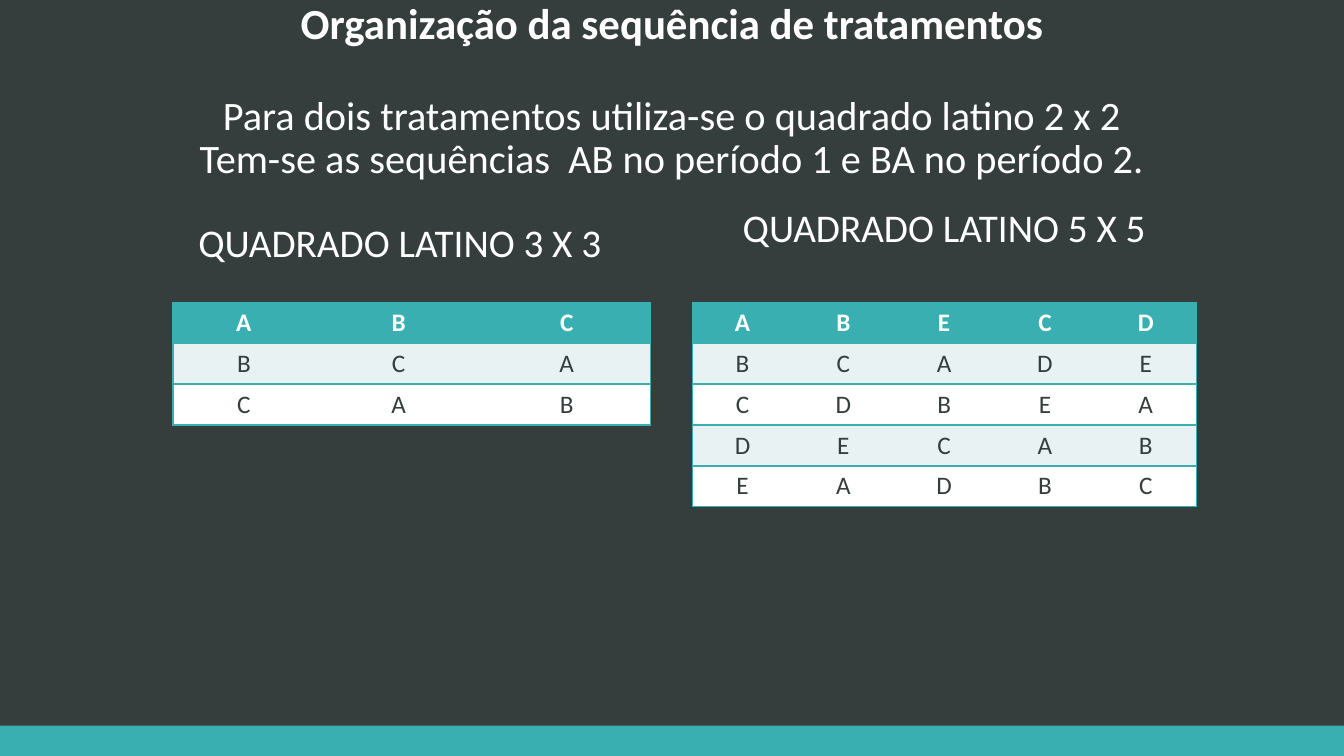
import pptx
import pptx.util
import pptx.dml.color
import pptx.enum.shapes
import pptx.enum.text
import pptx.oxml.ns
import lxml.etree

Pt = pptx.util.Pt
ANCHOR = pptx.enum.text.MSO_ANCHOR
TEAL, DARK, PALE, WHITE = "3AAFB2", "363D3D", "E8F2F2", "FFFFFF"
ROW_HEIGHT = 29.28


def rgb(value):
    """Turn a hex string into a colour."""
    return pptx.dml.color.RGBColor.from_string(value)


def write(paragraph, text, size=28, color=WHITE, bold=False, spacing=0.9, after=0):
    """Fill a centred paragraph with formatted text."""
    paragraph.alignment = pptx.enum.text.PP_ALIGN.CENTER
    paragraph.line_spacing = spacing
    paragraph.space_after = Pt(after)
    run = paragraph.add_run()
    run.text = text
    run.font.name = "Calibri"
    run.font.size = Pt(size)
    run.font.bold = bold
    run.font.color.rgb = rgb(color)


def add_text(slide, left, top, width, height, lines, anchor, bottom_inset=3.6):
    """Add a text box with one paragraph for each (text, format) pair."""
    frame = slide.shapes.add_textbox(Pt(left), Pt(top), Pt(width), Pt(height)).text_frame
    frame.word_wrap = True
    frame.vertical_anchor = anchor
    frame.margin_bottom = Pt(bottom_inset)
    for index, (text, style) in enumerate(lines):
        paragraph = frame.add_paragraph() if index else frame.paragraphs[0]
        write(paragraph, text, **style)


def set_borders(cell, first, last):
    """Draw the horizontal edges and only the outer vertical edges."""
    qn = pptx.oxml.ns.qn
    properties = cell._tc.get_or_add_tcPr()
    for side, visible in (("L", first), ("R", last), ("T", True), ("B", True)):
        edge = lxml.etree.SubElement(properties, qn(f"a:ln{side}"), w=str(Pt(1)))
        if visible:
            paint = lxml.etree.SubElement(edge, qn("a:solidFill"))
            lxml.etree.SubElement(paint, qn("a:srgbClr"), val=TEAL)
        else:
            lxml.etree.SubElement(edge, qn("a:noFill"))


def add_latin_square(slide, left, top, widths, rows):
    """Add a table with one treatment letter in each cell."""
    square = slide.shapes.add_table(
        len(rows), len(widths), Pt(left), Pt(top), Pt(sum(widths)), Pt(ROW_HEIGHT * len(rows))
    ).table
    for column, width in zip(square.columns, widths):
        column.width = Pt(width)
    for r, letters in enumerate(rows):
        square.rows[r].height = Pt(ROW_HEIGHT)
        band = TEAL if r == 0 else (WHITE, PALE)[r % 2]
        for c, letter in enumerate(letters):
            cell = square.cell(r, c)
            set_borders(cell, c == 0, c == len(letters) - 1)
            cell.fill.solid()
            cell.fill.fore_color.rgb = rgb(band)
            write(cell.text_frame.paragraphs[0], letter, size=18,
                  color=DARK if r else WHITE, bold=r == 0, spacing=1.0)


def add_footer_bar(slide, left, top, width, height):
    """Add the plain bar along the bottom edge."""
    bar = slide.shapes.add_shape(pptx.enum.shapes.MSO_SHAPE.RECTANGLE,
                                 Pt(left), Pt(top), Pt(width), Pt(height))
    bar.shadow.inherit = False
    bar.fill.solid()
    bar.fill.fore_color.rgb = rgb(TEAL)
    bar.line.fill.background()


def main():
    """Build the slide and save it."""
    deck = pptx.Presentation()
    deck.slide_width, deck.slide_height = Pt(960), Pt(540)
    slide = deck.slides.add_slide(deck.slide_layouts[6])
    slide.background.fill.solid()
    slide.background.fill.fore_color.rgb = rgb(DARK)

    add_footer_bar(slide, 0, 518.4, 960, 21.6)
    add_text(slide, 105.6, 36.6, 748.8, 97.2, [
        ("Organização da sequência de tratamentos", {"size": 30.6, "bold": True, "after": 33.6}),
        ("Para dois tratamentos utiliza-se o quadrado latino 2 x 2", {"size": 28.8}),
        ("Tem-se as sequências  AB no período 1 e BA no período 2.", {"size": 28.8}),
    ], ANCHOR.BOTTOM)

    add_text(slide, 105.6, 144.6, 360, 60.5, [("QUADRADO LATINO 3 X 3", {})], ANCHOR.MIDDLE)
    add_latin_square(slide, 123.6, 215.8, [101.2, 120, 120], ["ABC", "BCA", "CAB"])

    add_text(slide, 494.4, 144.6, 360, 60.5, [("QUADRADO LATINO 5 X 5", {})],
             ANCHOR.MIDDLE, bottom_inset=25.2)
    add_latin_square(slide, 494.4, 215.8, [72] * 5,
                     ["ABECD", "BCADE", "CDBEA", "DECAB", "EADBC"])
    deck.save("out.pptx")


if __name__ == "__main__":
    main()
